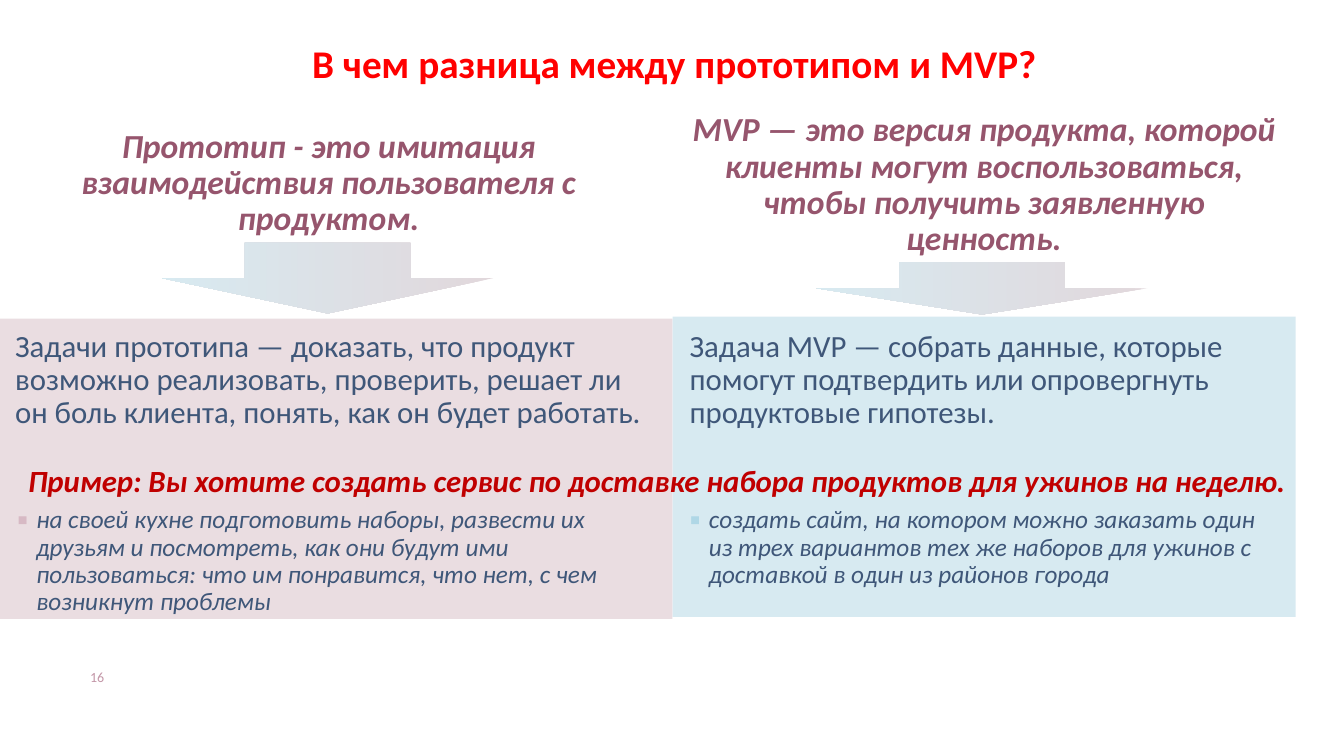
import pptx
import pptx.dml.color
import pptx.enum.shapes
import pptx.enum.text
import pptx.oxml
import pptx.oxml.ns
import pptx.util
from pptx.util import Inches

COLORS = {
    "title": "FF0000", "definition": "96556D", "body": "3F5779", "example": "C00000",
    "number": "C396A7", "prototype": "96556D", "mvp": "3B99BB", "arrow_end": "6D3B4F",
    "prototype_bullet": "D7B9C4", "mvp_bullet": "AFD7E6",
}
ALIGN = pptx.enum.text.PP_ALIGN
ANCHOR = pptx.enum.text.MSO_ANCHOR
SHAPE = pptx.enum.shapes.MSO_SHAPE

STYLES = {
    "title": {"size": 28, "bold": True, "italic": False, "align": ALIGN.CENTER, "anchor": ANCHOR.MIDDLE},
    "definition": {"size": 24, "bold": True, "italic": True, "align": ALIGN.CENTER, "anchor": ANCHOR.TOP},
    "task": {"size": 22, "bold": False, "italic": False, "align": ALIGN.LEFT, "anchor": ANCHOR.BOTTOM},
    "step": {"size": 18, "bold": False, "italic": True, "align": ALIGN.LEFT, "anchor": ANCHOR.TOP},
    "example": {"size": 22, "bold": True, "italic": True, "align": ALIGN.CENTER, "anchor": ANCHOR.BOTTOM},
    "number": {"size": 10, "bold": False, "italic": False, "align": ALIGN.CENTER, "anchor": ANCHOR.TOP},
}


def rgb(name):
    return pptx.dml.color.RGBColor.from_string(COLORS[name])


def place(shape, box):
    for side, length in zip(("left", "top", "width", "height"), box):
        setattr(shape, side, Inches(length))


def write(holder, box, text, style, color, bullet=None, left_inset=0.04, spacing=0.9):
    """Place a text holder and fill it with one formatted paragraph."""
    look = STYLES[style]
    place(holder, box)
    frame = holder.text_frame
    frame.text = text
    frame_format = {
        "word_wrap": True, "auto_size": pptx.enum.text.MSO_AUTO_SIZE.NONE,
        "vertical_anchor": look["anchor"], "margin_left": Inches(left_inset),
        "margin_top": 0, "margin_right": 0, "margin_bottom": 0,
    }
    for name, value in frame_format.items():
        setattr(frame, name, value)

    paragraph = frame.paragraphs[0]
    paragraph_format = {
        "alignment": look["align"], "line_spacing": spacing,
        "space_before": pptx.util.Pt(0), "space_after": pptx.util.Pt(0),
    }
    for name, value in paragraph_format.items():
        setattr(paragraph, name, value)
    if bullet:
        add_bullet(paragraph, bullet)

    font = paragraph.runs[0].font
    font_format = {
        "name": "Calibri", "size": pptx.util.Pt(look["size"]),
        "bold": look["bold"], "italic": look["italic"],
    }
    for name, value in font_format.items():
        setattr(font, name, value)
    font.color.rgb = rgb(color)


def add_bullet(paragraph, color):
    properties = paragraph._p.get_or_add_pPr()
    indent = Inches(0.19)
    properties.set("marL", str(indent))
    properties.set("indent", str(-indent))
    namespace = pptx.oxml.ns.nsdecls("a")
    for markup in (
        f'<a:buClr {namespace}><a:srgbClr val="{COLORS[color]}"/></a:buClr>',
        f'<a:buSzPct {namespace} val="125000"/>',
        f'<a:buFont {namespace} typeface="Arial"/>',
        f'<a:buChar {namespace} char="▪"/>',
    ):
        properties.append(pptx.oxml.parse_xml(markup))


def make_pale(shape):
    """Give every fill colour of the shape 20 % opacity."""
    namespace = pptx.oxml.ns.nsdecls("a")
    for color in shape.element.spPr.iter(pptx.oxml.ns.qn("a:srgbClr")):
        color.append(pptx.oxml.parse_xml(f'<a:alpha {namespace} val="20000"/>'))


def add_plain_shape(slide, kind, box):
    shape = slide.shapes.add_shape(kind, *map(Inches, box))
    shape.shadow.inherit = False
    shape.line.fill.background()
    return shape


def add_panel(slide, box, color):
    """Add a pale panel behind all the text."""
    panel = add_plain_shape(slide, SHAPE.RECTANGLE, box)
    panel.fill.solid()
    panel.fill.fore_color.rgb = rgb(color)
    make_pale(panel)
    slide.shapes.element.insert(2, panel.element)


def add_arrow(slide, box):
    arrow = add_plain_shape(slide, SHAPE.DOWN_ARROW, box)
    arrow.fill.gradient()
    arrow.fill.gradient_angle = 180
    for stop, color in zip(arrow.fill.gradient_stops, ("arrow_end", "mvp")):
        stop.color.rgb = rgb(color)
    make_pale(arrow)


def add_text_box(slide):
    return slide.shapes.add_textbox(0, 0, Inches(1), Inches(1))


def main():
    deck = pptx.Presentation()
    deck.slide_width, deck.slide_height = Inches(13.33), Inches(7.5)
    slide = deck.slides.add_slide(deck.slide_layouts.get_by_name("Comparison"))
    definition, prototype_step, task, mvp_step = [
        slide.placeholders[index] for index in (1, 2, 3, 4)]

    add_panel(slide, (0, 3.16, 6.67, 2.98), "prototype")
    add_panel(slide, (6.67, 3.14, 6.18, 2.98), "mvp")
    write(slide.shapes.title, (0.23, 0.34, 12.87, 0.62),
          "В чем разница между прототипом и MVP?", "title", "title")

    write(definition, (0.3, 1.28, 5.88, 1.26),
          "Прототип - это имитация взаимодействия пользователя с продуктом.",
          "definition", "definition")
    write(task, (0.11, 3.3, 6.38, 0.97),
          "Задачи прототипа — доказать, что продукт возможно реализовать, проверить, "
          "решает ли он боль клиента, понять, как он будет работать.", "task", "body")
    write(prototype_step, (0.13, 5.03, 6.07, 1.44),
          "на своей кухне подготовить наборы, развести их друзьям и посмотреть, как они "
          "будут ими пользоваться: что им понравится, что нет, с чем возникнут проблемы",
          "step", "body", bullet="prototype_bullet")

    write(add_text_box(slide), (6.8, 1.12, 5.88, 1.41),
          "MVP — это версия продукта, которой клиенты могут воспользоваться, "
          "чтобы получить заявленную ценность.", "definition", "definition")
    write(add_text_box(slide), (6.8, 3.3, 5.88, 0.97),
          "Задача MVP — собрать данные, которые помогут подтвердить или опровергнуть "
          "продуктовые гипотезы.", "task", "body")
    write(mvp_step, (6.8, 5.03, 5.79, 1.44),
          "создать сайт, на котором можно заказать один из трех вариантов тех же наборов "
          "для ужинов с доставкой в один из районов города",
          "step", "body", bullet="mvp_bullet")

    add_arrow(slide, (1.61, 2.41, 3.28, 0.7))
    add_arrow(slide, (8.1, 2.6, 3.28, 0.52))
    write(add_text_box(slide), (0.16, 4.58, 12.67, 0.37),
          "Пример: Вы хотите создать сервис по доставке набора продуктов для ужинов на неделю.",
          "example", "example")
    write(add_text_box(slide), (0.7, 6.63, 0.43, 0.26), "16", "number", "number",
          left_inset=0.1, spacing=1.0)
    deck.save("out.pptx")


if __name__ == "__main__":
    main()
